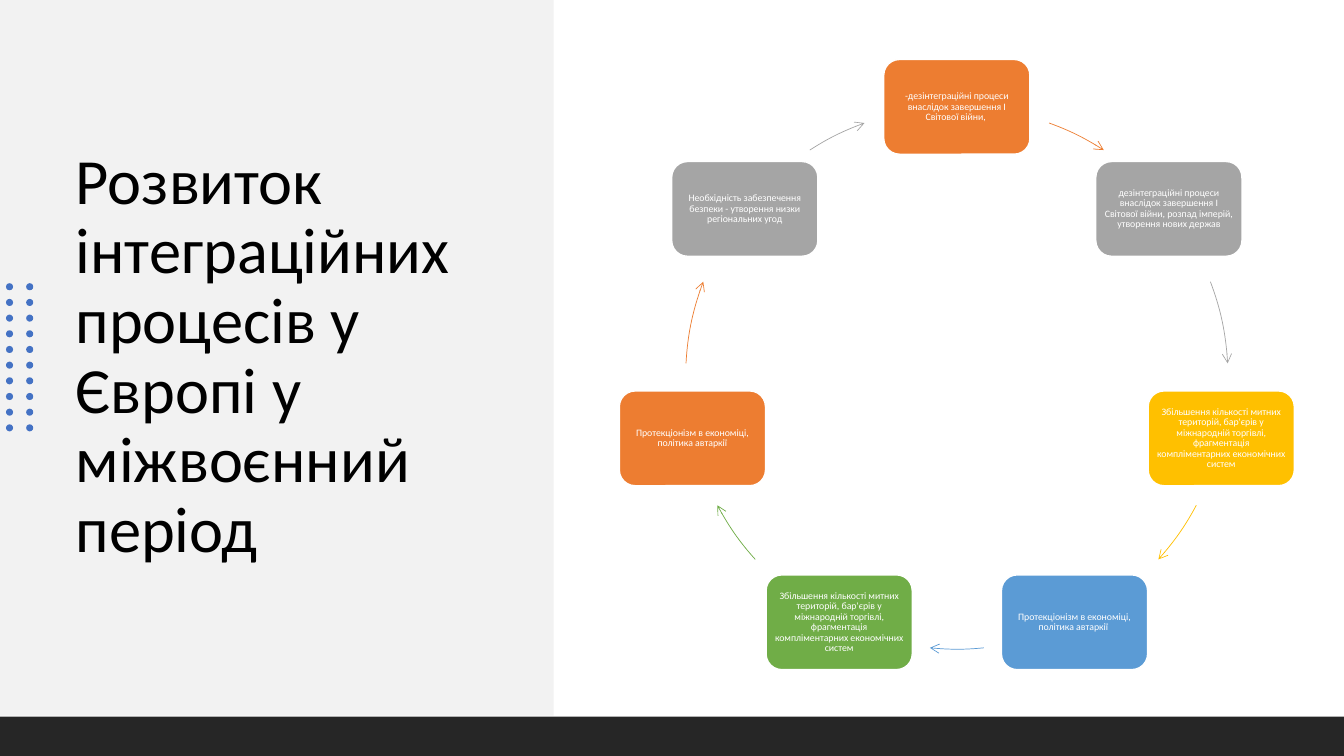
import math
from dataclasses import dataclass
from typing import Any

from lxml import etree
from pptx import Presentation
from pptx.dml import color
from pptx.enum import shapes, text
from pptx.oxml import ns
from pptx.util import Inches, Pt

CENTRE_X, CENTRE_Y, RADIUS = 9.49, 3.75, 2.69
BOX_WIDTH, BOX_HEIGHT = 1.45, 0.94

BARRIERS = ("Збільшення кількості митних територій, бар'єрів у міжнародній "
            "торгівлі, фрагментація компліментарних економічних систем")
# Text, colour, and the start and end angles of the arrow to the next stage
STAGES = [
    ("-дезінтеграційні процеси внаслідок завершення І Світової війни, ",
     "ED7D31", 19.9, 32.8),
    ("дезінтеграційні процеси внаслідок завершення І Світової війни, "
     "розпад імперій, утворення нових держав", "A5A5A5", 69.2, 86.9),
    (BARRIERS, "FFC000", 118, 132),
    ("Протекціонізм в економіці, політика автаркії ", "5B9BD5", 174.3, 185.7),
    (BARRIERS, "70AD47", 228, 242),
    ("Протекціонізм в економіці, політика автаркії", "ED7D31", 273.1, 290.8),
    ("Необхідність забезпечення безпеки - утворення низки регіональних угод",
     "A5A5A5", 327.2, 340.1),
]


def rgb(value):
    return color.RGBColor.from_string(value)


def set_values(target, values):
    for name, value in values.items():
        setattr(target, name, value)


def ring_point(degrees, radius=RADIUS):
    """Point on the ring, clockwise from the top, in inches."""
    angle = math.radians(degrees)
    return CENTRE_X + radius * math.sin(angle), CENTRE_Y - radius * math.cos(angle)


@dataclass
class Painter:
    page: Any
    font: str = "Calibri"

    def label(self, shape, words, size, hue, align, margin):
        frame = shape.text_frame
        set_values(frame, {
            "word_wrap": True, "auto_size": text.MSO_AUTO_SIZE.NONE,
            "vertical_anchor": text.MSO_ANCHOR.MIDDLE,
            "margin_left": margin, "margin_right": margin,
            "margin_top": margin, "margin_bottom": margin})
        para = frame.paragraphs[0]
        set_values(para, {"alignment": align, "line_spacing": 0.9})
        span = para.add_run()
        span.text = words
        set_values(span.font, {"name": self.font, "size": Pt(size)})
        span.font.color.rgb = rgb(hue)

    def title(self, words, place):
        title = self.page.shapes.title
        sides = ("left", "top", "width", "height")
        set_values(title, dict(zip(sides, map(Inches, place))))
        self.label(title, words, 46, "000000", text.PP_ALIGN.LEFT, Inches(0.1))
        return title

    def shape(self, kind, place, fill, outline=None):
        shape = self.page.shapes.add_shape(kind, *map(Inches, place))
        shape.shadow.inherit = False
        shape.fill.solid()
        shape.fill.fore_color.rgb = rgb(fill)
        if outline:
            shape.line.color.rgb = rgb(outline)
            shape.line.width = Pt(1)
        else:
            shape.line.fill.background()
        return shape

    def stage(self, words, degrees, fill):
        x, y = ring_point(degrees)
        place = (x - BOX_WIDTH / 2, y - BOX_HEIGHT / 2, BOX_WIDTH, BOX_HEIGHT)
        box = self.shape(shapes.MSO_SHAPE.ROUNDED_RECTANGLE, place, fill, "FFFFFF")
        self.label(box, words, 7, "FFFFFF", text.PP_ALIGN.CENTER, Inches(0.03))

    def arc_arrow(self, start, end, hue):
        """Draw one cubic curve along the ring, with an arrowhead at its end."""
        handle = 4 / 3 * math.tan(math.radians(end - start) / 4)
        reach = RADIUS * math.hypot(1, handle)
        turn = math.degrees(math.atan(handle))
        points = [ring_point(start), ring_point(start + turn, reach),
                  ring_point(end - turn, reach), ring_point(end)]
        first, *rest = [(Inches(x), Inches(y)) for x, y in points]
        builder = self.page.shapes.build_freeform(*first)
        builder.add_line_segments(rest, close=False)
        arrow = builder.convert_to_shape()
        arrow.shadow.inherit = False
        arrow.fill.background()
        arrow.line.color.rgb = rgb(hue)
        arrow.line.width = Pt(0.5)

        segments = list(arrow.element.iter(ns.qn("a:lnTo")))
        outline = segments[0].getparent()
        curve = etree.SubElement(outline, ns.qn("a:cubicBezTo"))
        for segment in segments:
            curve.append(segment[0])
            outline.remove(segment)
        line = arrow.element.spPr.find(ns.qn("a:ln"))
        etree.SubElement(line, ns.qn("a:tailEnd"), type="arrow")


def main():
    deck = Presentation()
    set_values(deck, {"slide_width": Inches(13.33), "slide_height": Inches(7.5)})
    painter = Painter(deck.slides.add_slide(deck.slide_layouts[5]))
    kinds = shapes.MSO_SHAPE

    panel = painter.shape(kinds.RECTANGLE, (0, 0, 5.49, 7.1), "F2F2F2")
    title = painter.title("Розвиток інтеграційних процесів у Європі у міжвоєнний період",
                          (0.65, 1.32, 4.24, 4.45))
    title.element.addprevious(panel.element)

    for row in range(10):
        for column in range(2):
            place = (0.06 + 0.2 * column, 2.81 + 1.4 / 9 * row, 0.07, 0.07)
            painter.shape(kinds.OVAL, place, "4472C4")
    painter.shape(kinds.RECTANGLE, (0, 7.11, 13.33, 0.39), "262626")

    for index, (words, hue, start, end) in enumerate(STAGES):
        painter.stage(words, 360 / len(STAGES) * index, hue)
        painter.arc_arrow(start, end, hue)
    deck.save("out.pptx")


if __name__ == "__main__":
    main()
